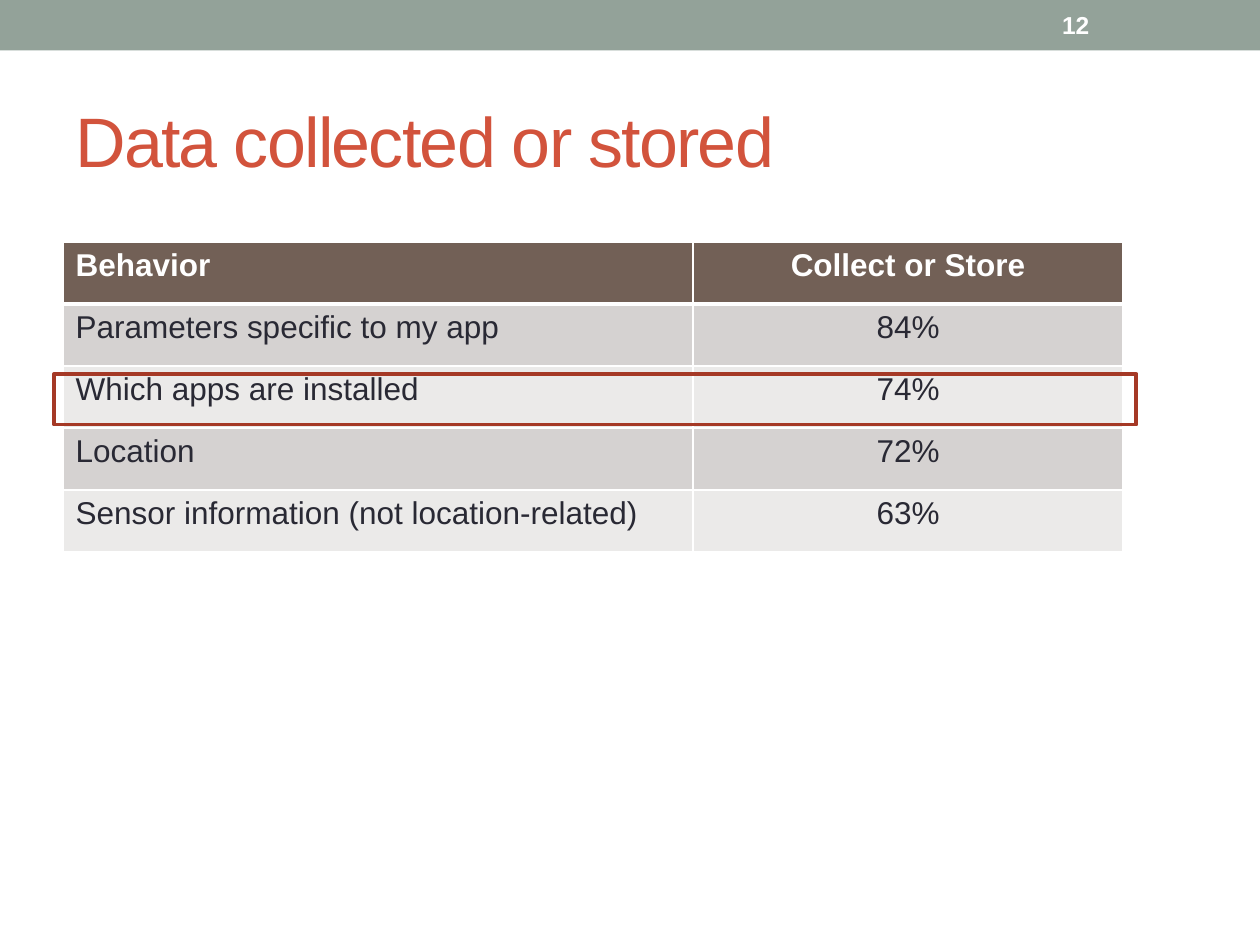
from lxml import etree
from pptx import Presentation
from pptx import util as u
from pptx.dml import color
from pptx.enum import shapes, text
from pptx.oxml import ns

COLORS = {
    "band": "93A299",
    "title": "D2533C",
    "white": "FFFFFF",
    "header": "726056",
    "odd_row": "D5D2D1",
    "even_row": "EBEAE9",
    "body": "292934",
    "highlight": "A53926",
}
ROWS = [
    ("Behavior", "Collect or Store"),
    ("Parameters specific to my app", "84%"),
    ("Which apps are installed", "74%"),
    ("Location", "72%"),
    ("Sensor information (not location-related)", "63%"),
]
COLUMN_WIDTHS = (12.7, 8.67)
ROW_HEIGHT = 1.25
ALIGNMENTS = (text.PP_ALIGN.LEFT, text.PP_ALIGN.CENTER)


def rgb(name):
    return color.RGBColor.from_string(COLORS[name])


def write(frame, content, color_name, size, bold=False, align=text.PP_ALIGN.LEFT):
    paragraph = frame.paragraphs[0]
    paragraph.alignment = align
    run = paragraph.add_run()
    run.text = content
    for name, value in {"name": "Arial", "size": u.Pt(size), "bold": bold}.items():
        setattr(run.font, name, value)
    run.font.color.rgb = rgb(color_name)
    return run


def add_text(slide, box, content, color_name, size, bold=False):
    frame = slide.shapes.add_textbox(*map(u.Cm, box)).text_frame
    frame.word_wrap = True
    frame.vertical_anchor = text.MSO_ANCHOR.MIDDLE
    return write(frame, content, color_name, size, bold)


def add_rectangle(slide, box, fill=None, line=None, width=0):
    shape = slide.shapes.add_shape(shapes.MSO_SHAPE.RECTANGLE, *map(u.Cm, box))
    shape.shadow.inherit = False
    if fill:
        shape.fill.solid()
        shape.fill.fore_color.rgb = rgb(fill)
    else:
        shape.fill.background()
    if line:
        shape.line.color.rgb = rgb(line)
        shape.line.width = u.Pt(width)
    else:
        shape.line.fill.background()


def set_borders(cell, widths):
    properties = cell._tc.get_or_add_tcPr()
    for side, width in widths.items():
        border = etree.SubElement(properties, ns.qn(f"a:ln{side}"), w=str(u.Pt(width)))
        fill = etree.SubElement(border, ns.qn("a:solidFill"))
        etree.SubElement(fill, ns.qn("a:srgbClr"), val=COLORS["white"])


def add_behavior_table(slide, left, top):
    size = (sum(COLUMN_WIDTHS), ROW_HEIGHT * len(ROWS))
    table = slide.shapes.add_table(
        len(ROWS), len(COLUMN_WIDTHS), *map(u.Cm, (left, top, *size))
    ).table
    for column, width in zip(table.columns, COLUMN_WIDTHS):
        column.width = u.Cm(width)
    for i, values in enumerate(ROWS):
        table.rows[i].height = u.Cm(ROW_HEIGHT)
        header = i == 0
        fill = "header" if header else ("even_row", "odd_row")[i % 2]
        for j, value in enumerate(values):
            cell = table.cell(i, j)
            top_width = 3 if i == 1 else 1
            bottom_width = 3 if header else 1
            set_borders(cell, {"L": 1, "R": 1, "T": top_width, "B": bottom_width})
            cell.fill.solid()
            cell.fill.fore_color.rgb = rgb(fill)
            text_color = "white" if header else "body"
            write(cell.text_frame, value, text_color, 18, header, ALIGNMENTS[j])


def main():
    presentation = Presentation()
    presentation.slide_width = u.Cm(25.4)
    presentation.slide_height = u.Cm(19.05)
    slide = presentation.slides.add_slide(presentation.slide_layouts[6])

    add_rectangle(slide, (0, 0, 25.4, 1.02), fill="band")
    title = add_text(
        slide, (1.27, 1.37, 23.27, 2.87), "Data collected or stored", "title", 40
    )
    title.font._element.set("spc", "-100")
    add_behavior_table(slide, 1.27, 4.88)
    add_text(slide, (21.16, 0.05, 2.97, 0.91), "12", "white", 14, bold=True)
    add_rectangle(slide, (1.09, 7.54, 21.82, 1.02), line="highlight", width=2.25)

    presentation.save("out.pptx")


if __name__ == "__main__":
    main()
